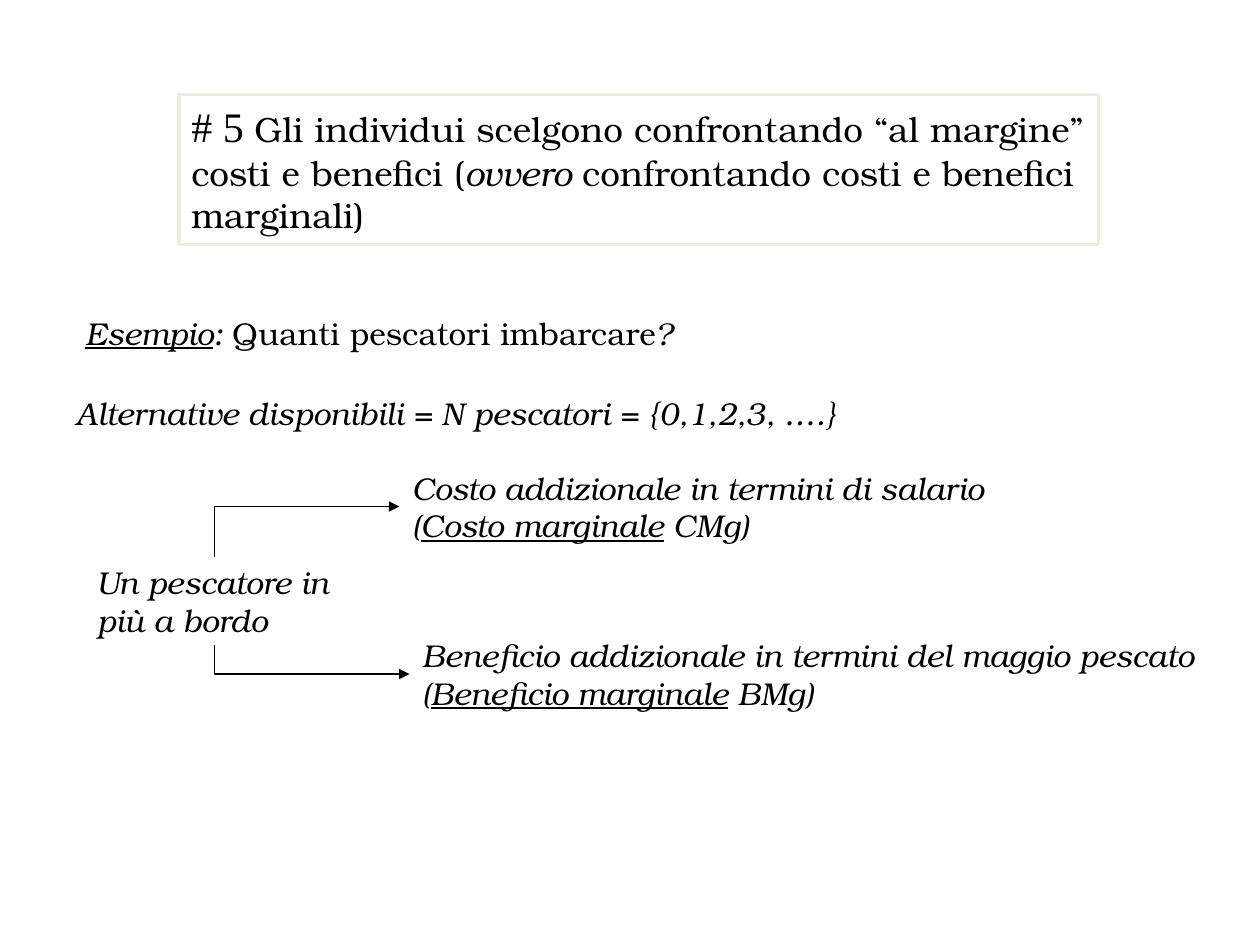
"""Build the slide on choosing at the margin, with the fishing-crew example."""
from dataclasses import dataclass

import pptx
import pptx.dml.color
import pptx.enum.shapes
import pptx.enum.text
import pptx.oxml
import pptx.oxml.ns
import pptx.util
from pptx.util import Inches


@dataclass(frozen=True)
class Theme:
    font: str = "TeX Gyre Bonum"
    number_font: str = "Times New Roman"
    ink: pptx.dml.color.RGBColor = pptx.dml.color.RGBColor(0, 0, 0)
    frame: pptx.dml.color.RGBColor = pptx.dml.color.RGBColor(0xEE, 0xEC, 0xE1)
    number_size: pptx.util.Pt = pptx.util.Pt(24)
    title_size: pptx.util.Pt = pptx.util.Pt(20)
    body_size: pptx.util.Pt = pptx.util.Pt(18)
    frame_width: pptx.util.Pt = pptx.util.Pt(2)
    arrow_width: pptx.util.Pt = pptx.util.Pt(0.75)


@dataclass(frozen=True)
class Run:
    text: str
    italic: bool = True
    underline: bool = False


@dataclass(frozen=True)
class Block:
    left: float
    top: float
    width: float
    height: float
    paragraphs: list[list[Run]]


@dataclass(frozen=True)
class Arrow:
    x1: float
    y1: float
    x2: float
    y2: float


THEME = Theme()

TITLE = Block(1.42, 0.75, 7.3, 1.19, [[
    Run("# 5 ", italic=False),
    Run("Gli individui scelgono confrontando “al margine” costi e benefici (", italic=False),
    Run("ovvero "),
    Run("confrontando costi e benefici marginali)", italic=False),
]])


def effect(heading: str, term: str, symbol: str) -> list[list[Run]]:
    """Return the two paragraphs that name a marginal effect."""
    return [[Run(heading)], [Run("("), Run(term, underline=True), Run(f" {symbol})")]]


BLOCKS = [
    Block(0.58, 2.44, 4.86, 0.4, [[
        Run("Esempio", underline=True), Run(": "),
        Run("Quanti pescatori imbarcare", italic=False), Run("?"),
    ]]),
    Block(0.5, 3.08, 6.4, 0.4, [[Run("Alternative disponibili = N pescatori = {0,1,2,3, ….}")]]),
    Block(3.17, 3.67, 4.9, 0.7,
          effect("Costo addizionale in termini di salario", "Costo marginale", "CMg")),
    Block(3.25, 5, 6.33, 0.7,
          effect("Beneficio addizionale in termini del maggio pescato",
                 "Beneficio marginale", "BMg")),
    Block(0.67, 4.42, 2.2, 0.7, [[Run("Un pescatore in")], [Run("più a bordo")]]),
]

ARROWS = [Arrow(1.7, 4.42, 3.17, 4.02), Arrow(1.7, 5.12, 3.25, 5.35)]


def write(tf: pptx.text.text.TextFrame, block: Block, size: pptx.util.Pt) -> None:
    """Fill a text frame with the runs of a block."""
    tf.word_wrap = True
    tf.vertical_anchor = pptx.enum.text.MSO_ANCHOR.TOP
    for i, runs in enumerate(block.paragraphs):
        p = tf.add_paragraph() if i else tf.paragraphs[0]
        p.alignment = pptx.enum.text.PP_ALIGN.LEFT
        p.font.name, p.font.size = THEME.font, size
        p.font.color.rgb = THEME.ink
        for run in runs:
            r = p.add_run()
            r.text = run.text
            r.font.italic = run.italic
            r.font.underline = run.underline


def place(block: Block) -> tuple[pptx.util.Inches, ...]:
    """Return the position and size of a block as lengths."""
    return tuple(Inches(v) for v in (block.left, block.top, block.width, block.height))


def draw_title(s: pptx.slide.Slide, block: Block) -> None:
    """Draw the framed title with its larger number."""
    sp = s.shapes.add_shape(pptx.enum.shapes.MSO_SHAPE.RECTANGLE, *place(block))
    sp.shadow.inherit = False
    sp.fill.background()
    sp.line.color.rgb = THEME.frame
    sp.line.width = THEME.frame_width
    write(sp.text_frame, block, THEME.title_size)
    number = sp.text_frame.paragraphs[0].runs[0].font
    number.name, number.size = THEME.number_font, THEME.number_size


def draw_block(s: pptx.slide.Slide, block: Block) -> None:
    """Draw a block of body text."""
    write(s.shapes.add_textbox(*place(block)).text_frame, block, THEME.body_size)


def draw_arrow(s: pptx.slide.Slide, arrow: Arrow) -> None:
    """Draw a one-bend arrow that leaves vertically and arrives horizontally."""
    cx, cy = (arrow.x1 + arrow.x2) / 2, (arrow.y1 + arrow.y2) / 2
    half_w, half_h = (arrow.y1 - arrow.y2) / 2, (arrow.x2 - arrow.x1) / 2
    c = s.shapes.add_connector(
        pptx.enum.shapes.MSO_CONNECTOR.ELBOW,
        Inches(cx - half_w), Inches(cy - half_h), Inches(cx + half_w), Inches(cy + half_h))
    c.line.color.rgb = THEME.ink
    c.line.width = THEME.arrow_width
    qn = pptx.oxml.ns.qn
    props = c._element.spPr
    props.find(qn("a:xfrm")).set("rot", str(270 * 60000))
    props.find(qn("a:prstGeom")).set("prst", "bentConnector2")
    ns = pptx.oxml.ns.nsdecls("a")
    props.find(qn("a:ln")).append(pptx.oxml.parse_xml(f'<a:tailEnd {ns} type="triangle"/>'))
    props.append(pptx.oxml.parse_xml(f"<a:effectLst {ns}/>"))


def main() -> None:
    """Build and save the slide."""
    prs = pptx.Presentation()
    prs.slide_width, prs.slide_height = Inches(10), Inches(7.5)
    s = prs.slides.add_slide(prs.slide_layouts[6])
    draw_title(s, TITLE)
    for block in BLOCKS:
        draw_block(s, block)
    for arrow in ARROWS:
        draw_arrow(s, arrow)
    prs.save("out.pptx")


if __name__ == "__main__":
    main()
